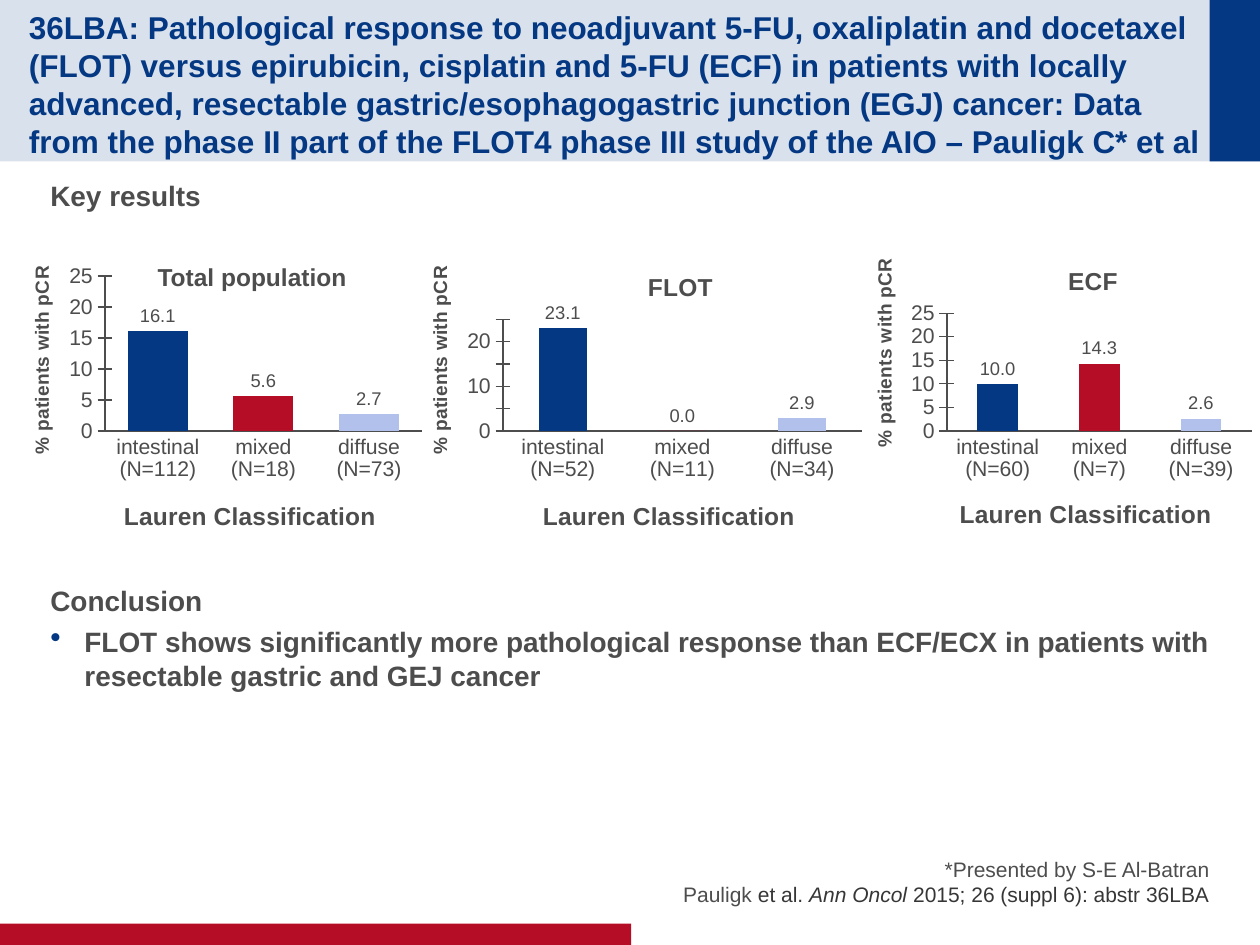
from lxml import etree
from pptx import Presentation
from pptx.chart.data import CategoryChartData
from pptx.dml.color import RGBColor
from pptx.enum.chart import XL_CHART_TYPE, XL_LABEL_POSITION, XL_TICK_MARK
from pptx.enum.shapes import MSO_SHAPE
from pptx.enum.text import MSO_ANCHOR, PP_ALIGN
from pptx.oxml.ns import qn
from pptx.util import Pt

NAVY = RGBColor(0x04, 0x38, 0x82)
RED = RGBColor(0xB6, 0x0D, 0x27)
LILAC = RGBColor(0xB2, 0xC0, 0xEC)
GREY = RGBColor(0x4D, 0x4D, 0x4D)
DARK = RGBColor(0x36, 0x36, 0x36)
FONT = "Arial"
COLUMN = XL_CHART_TYPE.COLUMN_CLUSTERED
OUTER = XL_LABEL_POSITION.OUTSIDE_END
CROSS, NONE = XL_TICK_MARK.CROSS, XL_TICK_MARK.NONE
RECT = MSO_SHAPE.RECTANGLE
TOP, MIDDLE, BOTTOM = MSO_ANCHOR.TOP, MSO_ANCHOR.MIDDLE, MSO_ANCHOR.BOTTOM
LEFT, RIGHT = PP_ALIGN.LEFT, PP_ALIGN.RIGHT


def style(font, size, color=GREY, bold=False, italic=False):
    font.name = FONT
    font.size = Pt(size)
    font.color.rgb = color
    font.bold = bold
    font.italic = italic


def add_run(para, text, size, color=GREY, bold=False, italic=False):
    run = para.add_run()
    run.text = text
    style(run.font, size, color, bold, italic)


def add_bar(slide, box, color, alpha=None):
    bar = slide.shapes.add_shape(RECT, *map(Pt, box))
    bar.shadow.inherit = False
    bar.line.fill.background()
    bar.fill.solid()
    bar.fill.fore_color.rgb = color
    if alpha:
        tint = bar.fill._xPr.find(".//" + qn("a:srgbClr"))
        etree.SubElement(tint, qn("a:alpha")).set("val", str(alpha * 1000))


def add_text(slide, box, anchor=TOP, inset=0, wrap=True):
    frame = slide.shapes.add_textbox(*map(Pt, box)).text_frame
    frame.word_wrap = wrap
    frame.vertical_anchor = anchor
    frame.margin_left = frame.margin_right = frame.margin_bottom = 0
    frame.margin_top = Pt(inset)
    return frame


def add_bullet(para):
    props = para._p.get_or_add_pPr()
    props.set("marL", str(Pt(19.5)))
    props.set("indent", str(-Pt(19.5)))
    color = etree.SubElement(props, qn("a:buClr"))
    etree.SubElement(color, qn("a:srgbClr")).set("val", str(NAVY))
    etree.SubElement(props, qn("a:buSzPct")).set("val", "110000")
    etree.SubElement(props, qn("a:buChar")).set("char", "•")


def add_layout(owner, place, box, inner=False):
    for old in owner.findall(qn("c:layout")):
        owner.remove(old)
    layout = etree.Element(qn("c:layout"))
    owner.insert(0 if inner else 1, layout)
    manual = etree.SubElement(layout, qn("c:manualLayout"))
    parts = [("xMode", "edge"), ("yMode", "edge")]
    if inner:
        parts.insert(0, ("layoutTarget", "inner"))
    sizes = (box[2], box[3]) * 2
    parts += [(key, round(val / size, 4)) for key, val, size in zip("xywh", place, sizes)]
    for key, val in parts:
        etree.SubElement(manual, qn("c:" + key)).set("val", str(val))


def set_title(title, text, size, place, box, turn=False):
    frame = title.text_frame
    add_run(frame.paragraphs[0], text, size, bold=True)
    if turn:
        body = title._element.find(".//" + qn("a:bodyPr"))
        body.set("rot", "-5400000")
        body.set("vert", "horz")
    add_layout(title._element, place, box)


def set_axis(axis, tick):
    axis.major_tick_mark = tick
    axis.minor_tick_mark = NONE
    axis.has_major_gridlines = False
    style(axis.tick_labels.font, 12.1)
    axis.format.line.color.rgb = GREY
    axis.format.line.width = Pt(0.75)


def add_chart(slide, box, plot_box, names, vals, gap, foot, head=None):
    data = CategoryChartData(number_format="0.0")
    data.categories = names
    data.add_series("Series 1", vals)
    chart = slide.shapes.add_chart(COLUMN, *map(Pt, box), data).chart
    style(chart.font, 10)
    chart.has_legend = False
    chart.has_title = head is not None
    if head:
        text, place = head
        set_title(chart.chart_title, text, 14, place, box)
        chart.chart_title.include_in_layout = False

    across, upright = chart.category_axis, chart.value_axis
    set_axis(across, NONE)
    set_axis(upright, CROSS)
    upright.minimum_scale = 0
    upright.maximum_scale = 25
    upright.major_unit = 5
    upright.tick_labels.number_format = "0"
    upright.tick_labels.number_format_is_linked = False
    set_title(across.axis_title, "Lauren Classification", 14, foot, box)
    set_title(upright.axis_title, "% patients with pCR", 10.9, (12, 1.5), box, turn=True)

    plot = chart.plots[0]
    plot.gap_width = gap
    plot.vary_by_categories = False
    plot.has_data_labels = True
    labels = plot.data_labels
    labels.show_value = True
    labels.number_format = "0.0"
    labels.number_format_is_linked = False
    labels.position = OUTER
    style(labels.font, 10.5)
    for index, color in enumerate((NAVY, RED, LILAC)):
        fill = plot.series[0].points[index].format.fill
        fill.solid()
        fill.fore_color.rgb = color
    area = chart._chartSpace.find(".//" + qn("c:plotArea"))
    add_layout(area, plot_box, box, inner=True)


def add_header(slide, box):
    left, top, width, height = box
    add_bar(slide, box, NAVY, 15)
    add_bar(slide, (left + width - 28.8, top, 28.8, height), NAVY)
    frame = add_text(slide, (left + 16.56, top, 673.2, height), MIDDLE, 3.6)
    add_run(frame.paragraphs[0],
            "36LBA: Pathological response to neoadjuvant 5-FU, oxaliplatin and docetaxel "
            "(FLOT) versus epirubicin, cisplatin and 5-FU (ECF) in patients with locally "
            "advanced, resectable gastric/esophagogastric junction (EGJ) cancer: Data from "
            "the phase II part of the FLOT4 phase III study of the AIO – Pauligk C* et al",
            18, NAVY, True)


def add_results(slide, box):
    left, top, width, height = box
    frame = add_text(slide, (left + 28.8, top, 662.4, 22))
    add_run(frame.paragraphs[0], "Key results", 16, bold=True)
    add_chart(slide, (left + 2.2, top + 46, 244, 166.3), (57.8, 9.4, 181, 88.6),
              ("intestinal (N=112)", "mixed (N=18)", "diffuse (N=73)"),
              (16.1, 5.6, 2.7), 75, (66, 135))
    add_chart(slide, (left + 229.7, top + 46, 267.8, 166.3), (57.8, 34.3, 205, 63.7),
              ("intestinal (N=52)", "mixed (N=11)", "diffuse (N=34)"),
              (23.1, 0, 2.9), 150, (78, 135), ("FLOT", (138, 4)))
    add_chart(slide, (left + 483.8, top + 41.7, 236.2, 170), (57.3, 35, 174.3, 67.3),
              ("intestinal (N=60)", "mixed (N=7)", "diffuse (N=39)"),
              (10, 14.3, 2.6), 150, (62, 138.5), ("ECF", (124, 5)))
    frame = add_text(slide, (left + 90, top + 47.6, 110, 17), wrap=False)
    add_run(frame.paragraphs[0], "Total population", 14, bold=True)


def add_ending(slide, box):
    frame = add_text(slide, box)
    first = frame.paragraphs[0]
    first.space_after = Pt(4)
    add_run(first, "Conclusion", 16, bold=True)
    point = frame.add_paragraph()
    point.alignment = LEFT
    add_bullet(point)
    add_run(point, "FLOT shows significantly more pathological response than ECF/ECX "
            "in patients with resectable gastric and GEJ cancer", 16, bold=True)


def add_footer(slide, box):
    left, top, width, height = box
    add_bar(slide, (left, top + height - 12.2, 360.7, 12.2), RED)
    frame = add_text(slide, (left + 365.8, top, 325.4, 38.2), BOTTOM)
    para = frame.paragraphs[0]
    para.alignment = RIGHT
    add_run(para, "*Presented by S-E Al-Batran", 12)
    para.add_line_break()
    add_run(para, "Pauligk ", 12)
    add_run(para, "et al. ", 12, DARK)
    add_run(para, "Ann Oncol", 12, DARK, italic=True)
    add_run(para, " 2015; 26 (suppl 6): abstr 36LBA", 12, DARK)


def main():
    deck = Presentation()
    deck.slide_width, deck.slide_height = Pt(720), Pt(540)
    slide = deck.slides.add_slide(deck.slide_layouts[6])
    add_header(slide, (0, 0, 720, 92.2))
    add_results(slide, (0, 102.3, 720, 212))
    add_ending(slide, (28.8, 333.7, 662.4, 70))
    add_footer(slide, (0, 480.2, 720, 59.8))
    deck.save("out.pptx")


if __name__ == "__main__":
    main()
